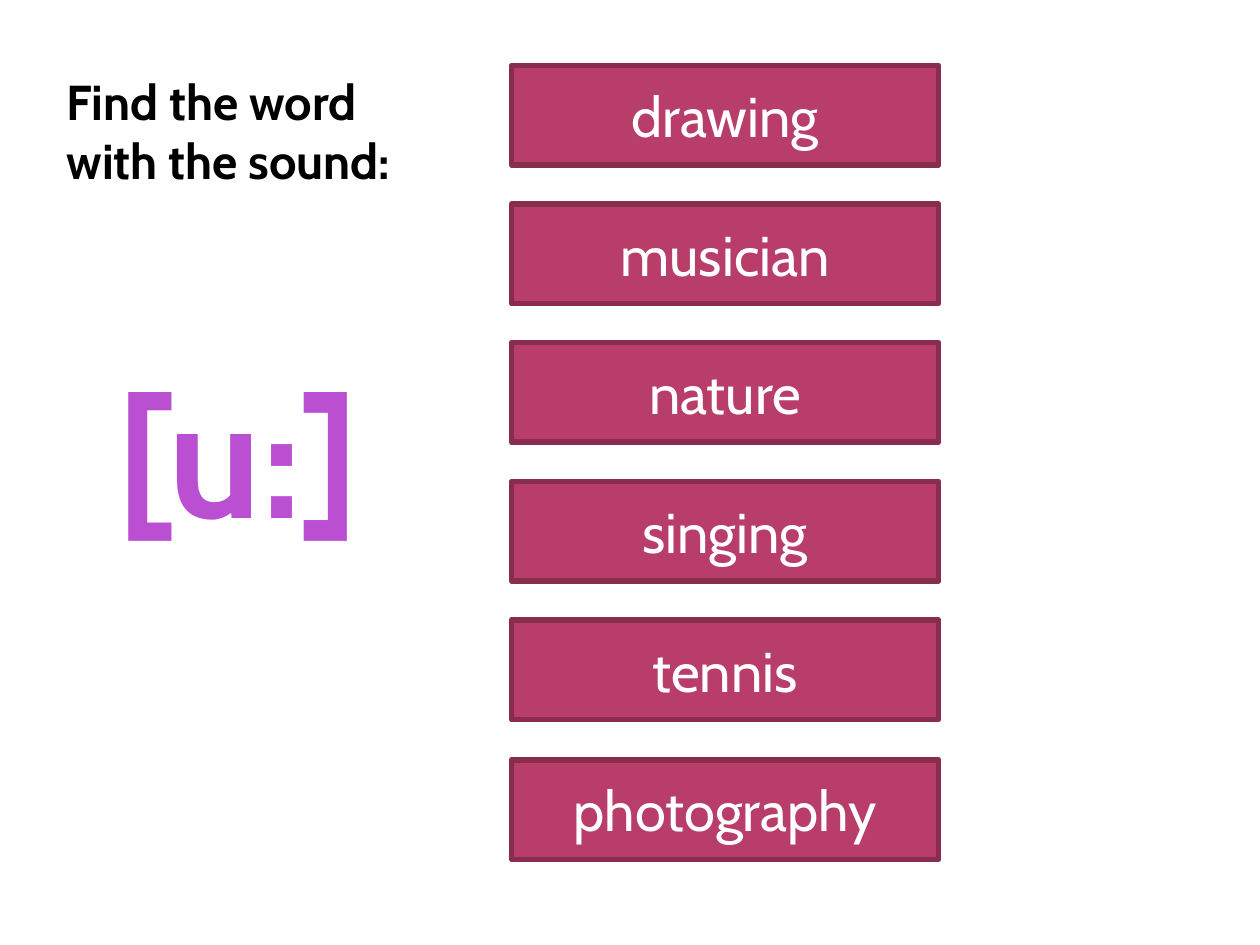
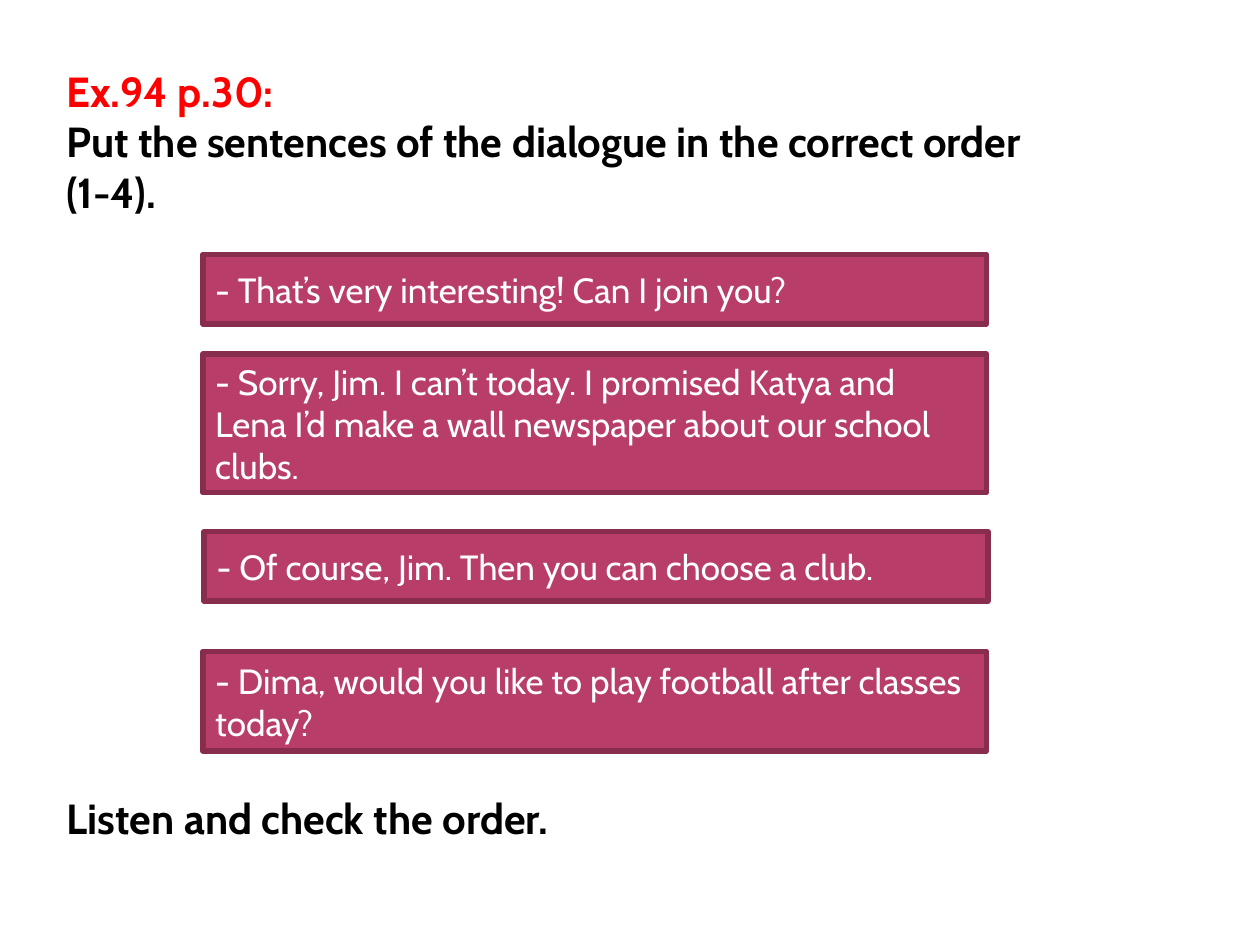
from dataclasses import dataclass
from pptx import Presentation
from pptx.dml.color import RGBColor as RGB
from pptx.enum.shapes import MSO_SHAPE as SHAPE
from pptx.enum.text import MSO_ANCHOR as ANCHOR, MSO_AUTO_SIZE as AUTO_SIZE, PP_ALIGN as ALIGN
from pptx.util import Pt


@dataclass(frozen=True)
class Theme:
    font: str = "Cabin"
    black: str = "000000"
    white: str = "FFFFFF"
    red: str = "FF0000"
    violet: str = "BB4FD2"
    card_fill: str = "B83D68"
    card_line: str = "882D4D"
    line_width: float = 3.15
    sentence_size: int = 20
    task_size: int = 24
    heading_size: int = 28
    word_size: int = 32
    sound_size: int = 96


theme = Theme()
PX = 9144


def add_text(slide, text, left, top, width, height, *, size, color=theme.black,
             first_color=None, bold=True, align=ALIGN.LEFT, wrap=True, spacing=0, card=False):
    box = [length * PX for length in (left, top, width, height)]
    if card:
        shape = slide.shapes.add_shape(SHAPE.RECTANGLE, *box)
        shape.shadow.inherit = False
        shape.fill.solid()
        shape.fill.fore_color.rgb = RGB.from_string(theme.card_fill)
        shape.line.color.rgb = RGB.from_string(theme.card_line)
        shape.line.width = Pt(theme.line_width)
    else:
        shape = slide.shapes.add_textbox(*box)
    frame = shape.text_frame
    frame.word_wrap = wrap
    frame.auto_size = AUTO_SIZE.NONE if card else AUTO_SIZE.SHAPE_TO_FIT_TEXT
    frame.vertical_anchor = ANCHOR.MIDDLE if card else ANCHOR.TOP
    frame.text = text
    for index, paragraph in enumerate(frame.paragraphs):
        paragraph.alignment = align
        for run in paragraph.runs:
            run.font.name = theme.font
            run.font.size = Pt(size)
            run.font.bold = bold
            shade = first_color if first_color and index == 0 else color
            run.font.color.rgb = RGB.from_string(shade)
            if spacing:
                run._r.get_or_add_rPr().set("spc", str(spacing))


presentation = Presentation()
presentation.slide_width = 1000 * PX
presentation.slide_height = 750 * PX
blank = presentation.slide_layouts[6]
card_style = dict(color=theme.white, bold=False, card=True)

sound_slide = presentation.slides.add_slide(blank)
add_text(sound_slide, "[u:]", 59, 273, 260, 172, size=theme.sound_size,
         color=theme.violet, align=ALIGN.CENTER, wrap=False, spacing=50)
words = ["drawing", "musician", "nature", "singing", "tennis", "photography"]
for row, word in enumerate(words):
    add_text(sound_slide, word, 406, 52 + row * 551 // 5, 339, 79,
             size=theme.word_size, align=ALIGN.CENTER, **card_style)
add_text(sound_slide, "Find the word with the sound:", 43, 52, 307, 104, size=theme.heading_size)

dialogue_slide = presentation.slides.add_slide(blank)
add_text(dialogue_slide,
         "Ex.94 p.30:\nPut the sentences of the dialogue in the correct order (1-4).",
         43, 47, 803, 131, size=theme.task_size, first_color=theme.red)
sentences = [
    (161, 202, 55, "- That’s very interesting! Can I join you?"),
    (161, 281, 110, "- Sorry, Jim. I can’t today. I promised Katya and Lena I’d make "
                    "a wall newspaper about our school clubs."),
    (162, 422, 55, "- Of course, Jim. Then you can choose a club."),
    (161, 517, 79, "- Dima, would you like to play football after classes today?"),
]
for left, top, height, sentence in sentences:
    add_text(dialogue_slide, sentence, left, top, 622, height,
             size=theme.sentence_size, **card_style)
add_text(dialogue_slide, "Listen and check the order.", 43, 624, 457, 50, size=theme.task_size)

presentation.save("out.pptx")
